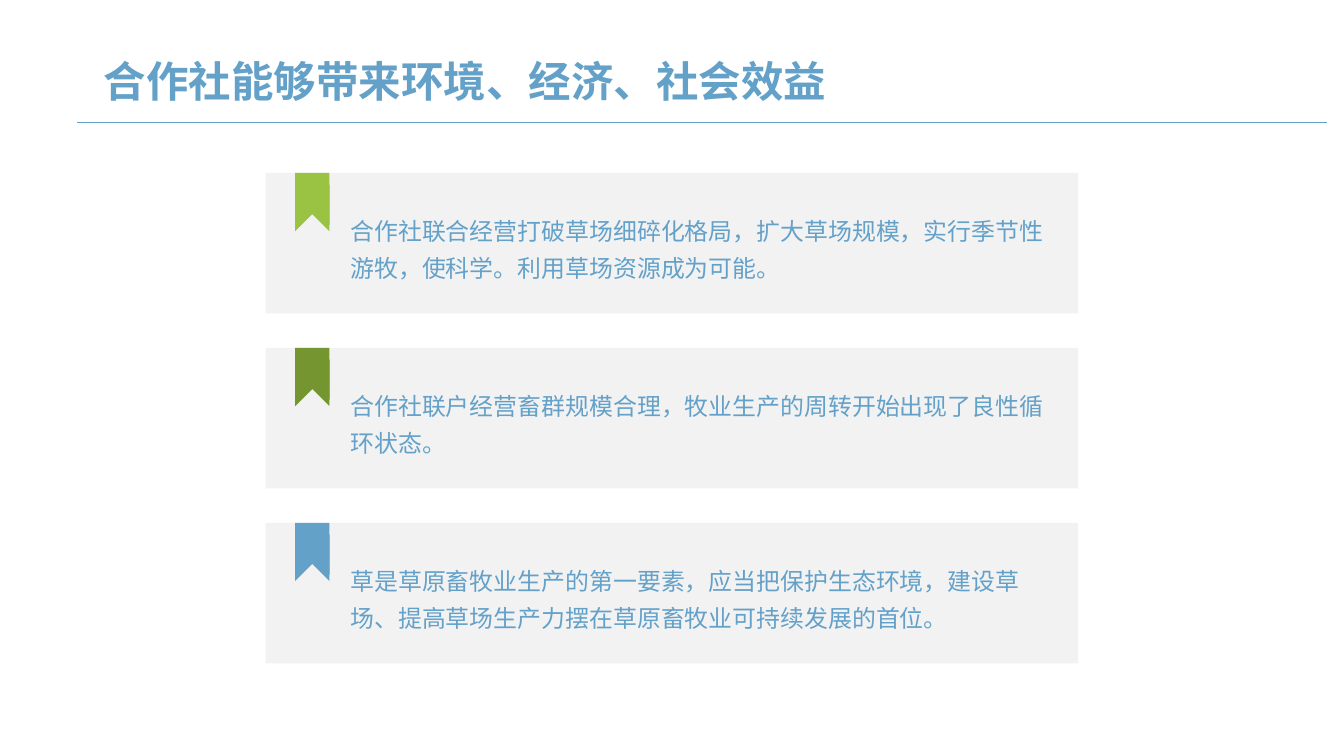
from dataclasses import dataclass

from lxml.etree import SubElement
from pptx import Presentation
from pptx.dml.color import RGBColor
from pptx.enum.shapes import MSO_CONNECTOR, MSO_SHAPE
from pptx.enum.text import MSO_ANCHOR, MSO_AUTO_SIZE, PP_ALIGN
from pptx.oxml.ns import qn
from pptx.util import Inches, Pt

FONT = "Noto Sans CJK SC"
COLORS = {
    "blue": "64A1C9",
    "lime": "9AC343",
    "olive": "74952F",
    "panel": "F2F2F2",
}
SLIDE_WIDTH, SLIDE_HEIGHT = Inches(14.06), Inches(7.91)

CARD_LEFT, CARD_TOP = 19.77, 22.88
CARD_WIDTH, CARD_HEIGHT = 60.46, 18.58
CARD_PITCH = 23.14
RIBBON_LEFT, RIBBON_WIDTH = CARD_LEFT + 2.19, 2.56
EDGE_WIDTH, BAND_HEIGHT = 0.36, 5.31


@dataclass(frozen=True)
class Benefit:
    statement: str
    ribbon_color: str


@dataclass(frozen=True)
class RibbonPart:
    preset: MSO_SHAPE
    indent: float
    drop: float
    width: float
    height: float
    rotation: int = 0


BENEFITS = [
    Benefit("合作社联合经营打破草场细碎化格局，扩大草场规模，实行季节性游牧，使科学。利用草场资源成为可能。", "lime"),
    Benefit("合作社联户经营畜群规模合理，牧业生产的周转开始出现了良性循环状态。", "olive"),
    Benefit("草是草原畜牧业生产的第一要素，应当把保护生态环境，建设草场、提高草场生产力摆在草原畜牧业可持续发展的首位。", "blue"),
]
RIBBON_PARTS = [
    RibbonPart(MSO_SHAPE.CHEVRON, 0, 3.16, RIBBON_WIDTH, 4.55, 270),
    RibbonPart(MSO_SHAPE.RECTANGLE, 0, 0, RIBBON_WIDTH, BAND_HEIGHT),
    RibbonPart(MSO_SHAPE.RECTANGLE, 0, 1.55, EDGE_WIDTH, BAND_HEIGHT),
    RibbonPart(MSO_SHAPE.RECTANGLE, RIBBON_WIDTH - EDGE_WIDTH, 1.55, EDGE_WIDTH, BAND_HEIGHT),
]


def across(percent: float) -> int:
    return round(SLIDE_WIDTH * percent / 100)


def down(percent: float) -> int:
    return round(SLIDE_HEIGHT * percent / 100)


def rgb(color: str) -> RGBColor:
    return RGBColor.from_string(COLORS[color])


def draw_plain(
    slide, preset: MSO_SHAPE, left: float, top: float, width: float, height: float, color: str
):
    shape = slide.shapes.add_shape(preset, across(left), down(top), across(width), down(height))
    shape.shadow.inherit = False
    shape.fill.solid()
    shape.fill.fore_color.rgb = rgb(color)
    shape.line.fill.background()
    return shape


def write(paragraph, words: str, size: int, bold: bool = False) -> None:
    run = paragraph.add_run()
    run.text = words
    run.font.size = Pt(size)
    run.font.bold = bold
    run.font.color.rgb = rgb("blue")
    run.font.name = FONT
    SubElement(run.font._element, qn("a:ea")).set("typeface", FONT)


def draw_heading(slide) -> None:
    heading = slide.shapes.title
    heading.left, heading.top = across(4.93), down(7.2)
    heading.width, heading.height = across(59.39), down(6.83)
    frame = heading.text_frame
    frame.auto_size = MSO_AUTO_SIZE.NONE
    frame.vertical_anchor = MSO_ANCHOR.MIDDLE
    frame.margin_left = frame.margin_right = 0
    frame.margin_top = frame.margin_bottom = 0
    paragraph = frame.paragraphs[0]
    paragraph.alignment = PP_ALIGN.CENTER
    paragraph.space_before = Pt(0)
    write(paragraph, "合作社能够带来环境、经济、社会效益", 32, bold=True)

    rule = slide.shapes.add_connector(
        MSO_CONNECTOR.STRAIGHT, across(5.76), down(16.18), across(98.72), down(16.18)
    )
    rule.line.color.rgb = rgb("blue")
    rule.line.width = Pt(0.5)
    SubElement(rule._element.spPr, qn("a:effectLst"))


def draw_card(slide, benefit: Benefit, top: float) -> None:
    draw_plain(slide, MSO_SHAPE.RECTANGLE, CARD_LEFT, top, CARD_WIDTH, CARD_HEIGHT, "panel")

    statement = slide.shapes.add_textbox(
        across(CARD_LEFT + 5.6), down(top + 4.03), across(54.34), down(11.25)
    )
    frame = statement.text_frame
    frame.word_wrap = True
    frame.auto_size = MSO_AUTO_SIZE.SHAPE_TO_FIT_TEXT
    paragraph = frame.paragraphs[0]
    paragraph.line_spacing = 1.3
    paragraph._p.get_or_add_pPr().set("hangingPunct", "0")
    write(paragraph, benefit.statement, 18)


def draw_ribbon(slide, top: float, color: str) -> None:
    for part in RIBBON_PARTS:
        piece = draw_plain(
            slide, part.preset, RIBBON_LEFT + part.indent, top + part.drop,
            part.width, part.height, color,
        )
        piece.rotation = part.rotation


def main() -> None:
    presentation = Presentation()
    presentation.slide_width, presentation.slide_height = SLIDE_WIDTH, SLIDE_HEIGHT
    slide = presentation.slides.add_slide(presentation.slide_layouts.get_by_name("Title Only"))
    draw_heading(slide)
    for row, benefit in enumerate(BENEFITS):
        top = CARD_TOP + row * CARD_PITCH
        draw_card(slide, benefit, top)
        draw_ribbon(slide, top, benefit.ribbon_color)
    presentation.save("out.pptx")


if __name__ == "__main__":
    main()
